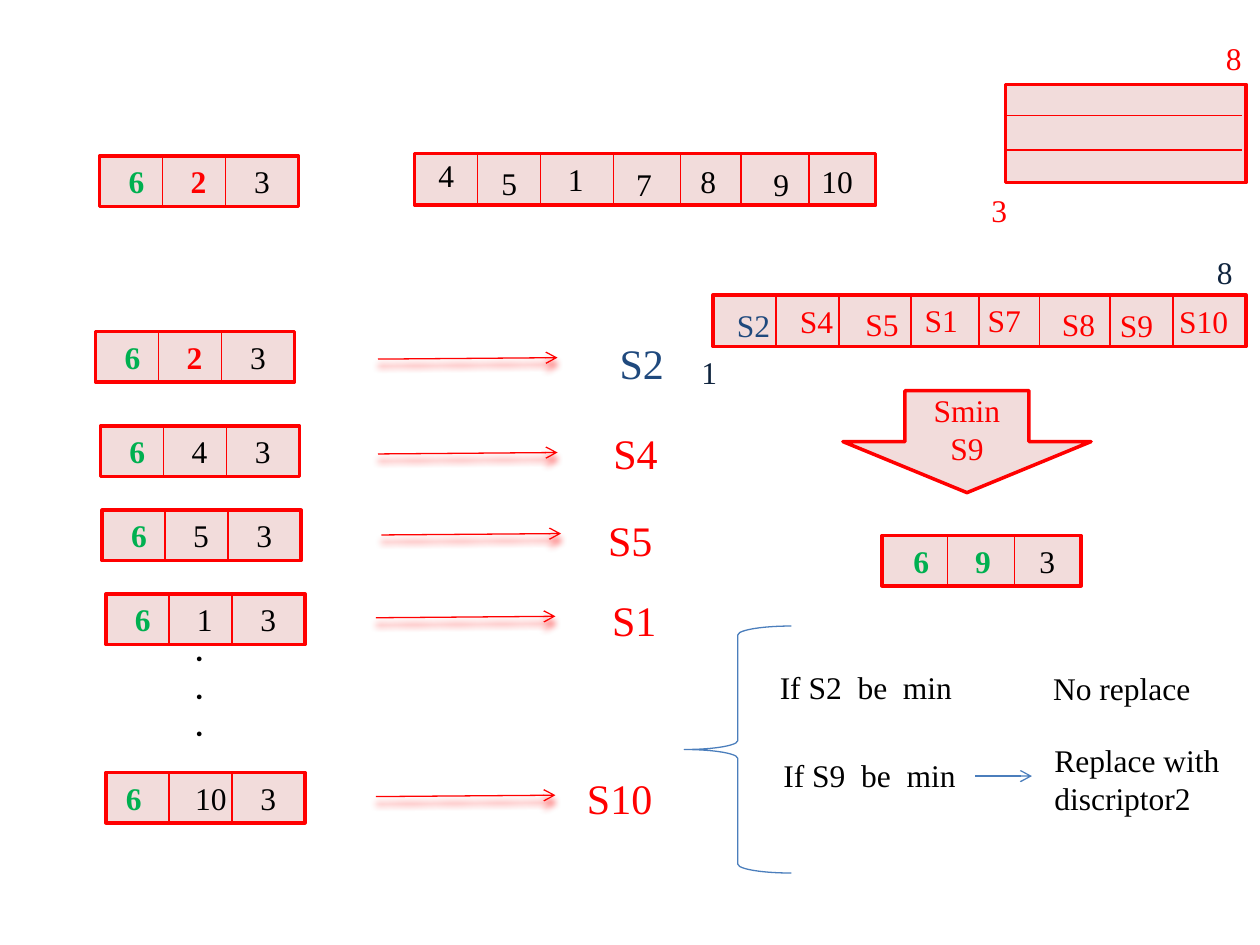
import pptx
import pptx.util
import pptx.dml.color
import pptx.enum.shapes
import pptx.enum.text
import pptx.oxml
import pptx.oxml.ns
import lxml.etree

Pt = pptx.util.Pt
SHAPES = pptx.enum.shapes.MSO_SHAPE
RED, GREEN, BLACK = "FF0000", "00B050", "000000"
BLUE, NAVY, STEEL, PINK = "1F497D", "0F243E", "4B7EBC", "F2DCDB"
SERIF = "Times New Roman"


def color(value):
    """Turn a hex string into a colour."""
    return pptx.dml.color.RGBColor.from_string(value)


def add_element(parent, tag, **attributes):
    """Append a DrawingML element and return it."""
    element = lxml.etree.SubElement(parent, pptx.oxml.ns.qn(tag))
    for name, value in attributes.items():
        element.set(name, str(value))
    return element


def write_text(shape, text, size, text_color, bold=False, font=SERIF, align=None):
    """Fill a shape with uniformly formatted paragraphs."""
    shape.text_frame.text = text
    for paragraph in shape.text_frame.paragraphs:
        paragraph.alignment = align
        paragraph.font.name = font
        paragraph.font.size = Pt(size)
        paragraph.font.bold = bold
        paragraph.font.color.rgb = color(text_color)


def add_label(slide, left, top, text, text_color=BLACK, bold=False, size=18,
              width=None, font=SERIF):
    """Add an unwrapped text box, sized from its text unless a width is given."""
    lines = text.split("\n")
    if width is None:
        width = 14.4 + size * (0.5 * len(text) + 0.06 * text.startswith("S"))
    height = 7.2 + 1.2 * size * len(lines)
    box = slide.shapes.add_textbox(Pt(left), Pt(top), Pt(width), Pt(height))
    box.text_frame.word_wrap = False
    box.text_frame.auto_size = pptx.enum.text.MSO_AUTO_SIZE.SHAPE_TO_FIT_TEXT
    write_text(box, text, size, text_color, bold, font)


def add_outline(slide, kind, left, top, width, height, fill=PINK, line=RED, weight=2):
    """Add a flat preset shape with an outline."""
    shape = slide.shapes.add_shape(kind, Pt(left), Pt(top), Pt(width), Pt(height))
    shape.shadow.inherit = False
    if fill:
        shape.fill.solid()
        shape.fill.fore_color.rgb = color(fill)
    else:
        shape.fill.background()
    shape.line.color.rgb = color(line)
    shape.line.width = Pt(weight)
    return shape


def add_line(slide, start, end, line=RED, arrow=False, glow=False):
    """Add a thin line, optionally with an arrowhead and a soft shadow."""
    connector = slide.shapes.add_connector(
        pptx.enum.shapes.MSO_CONNECTOR.STRAIGHT, *map(Pt, start + end))
    connector.line.color.rgb = color(line)
    connector.line.width = Pt(0.75)
    if arrow:
        add_element(connector.line._get_or_add_ln(), "a:tailEnd", type="arrow")
    effects = add_element(connector._element.spPr, "a:effectLst")
    if glow:
        shadow = add_element(effects, "a:outerShdw", blurRad=Pt(4), dist=Pt(4),
                             dir=5400000, algn="ctr", rotWithShape=0)
        add_element(shadow, "a:srgbClr", val=line)


def add_strip(slide, left, top, width, height, dividers, cells):
    """Add a bar split by vertical dividers, with labels offset from its corner."""
    add_outline(slide, SHAPES.RECTANGLE, left, top, width, height)
    for offset in dividers:
        add_line(slide, (left + offset, top - 0.5), (left + offset, top + height + 0.5))
    for text, across, down, text_color, bold in cells:
        add_label(slide, left + across, top + down, text, text_color, bold)


def add_descriptor(slide, left, top, middle, middle_color=BLACK,
                   dividers=(36, 72), offsets=(9.5, 45, 81.2)):
    """Add a three-cell descriptor whose middle value varies."""
    values = ("6", middle, "3")
    colors = (GREEN, middle_color, BLACK)
    cells = [(value, offset, 0, tint, tint != BLACK)
             for value, offset, tint in zip(values, offsets, colors)]
    add_strip(slide, left, top, 113.8, 28.8, dividers, cells)


def add_candidates(slide):
    """Add the candidate descriptors with arrows to their scores."""
    standard, last = (9.5, 45, 81.2), (4.3, 43.9, 81.2)
    candidates = [
        ("2", RED, BLUE, 54.6, 189.4, standard, 216, 205.2, 347, 189.4),
        ("4", BLACK, RED, 57.4, 243.4, standard, 216, 259.4, 343.4, 240.5),
        ("5", BLACK, RED, 58.3, 291.6, standard, 218, 305.7, 340.4, 290.2),
        ("1", BLACK, RED, 60.5, 339.5, standard, 214.8, 353, 342.7, 336.2),
        ("10", BLACK, RED, 60.5, 441.4, last, 214.8, 455.2, 328.3, 437.8),
    ]
    for (value, value_color, score_color, left, top, offsets,
         arrow_left, arrow_top, score_left, score_top) in candidates:
        add_descriptor(slide, left, top, value, value_color, offsets=offsets)
        add_line(slide, (arrow_left, arrow_top), (arrow_left + 102.6, arrow_top - 0.8),
                 arrow=True, glow=True)
        add_label(slide, score_left, score_top, "S" + value, score_color, size=24)
    add_label(slide, 104.4, 356.4, ".\n.\n.", bold=True, width=19.4, font="Calibri")


def add_long_strips(slide):
    """Add the strip of remaining descriptors and the strip of scores."""
    numbers = [("4", 6.5, -2.2), ("5", 42.5, 2.2), ("1", 80.6, 0), ("7", 119.5, 2.9),
               ("8", 156.2, 1.4), ("9", 198, 2.9), ("10", 225.4, 1.4)]
    add_strip(slide, 236.9, 87.8, 263.5, 29.5, (36, 72, 113.8, 151.9, 186.5, 225.4),
              [cell + (BLACK, False) for cell in numbers])
    scores = [("S2", 6.5, 2.9), ("S4", 42.5, 0.7), ("S5", 79.9, 2.2), ("S1", 113.8, 0),
              ("S7", 149.8, 0), ("S8", 192.2, 2.2), ("S9", 225.4, 2.9),
              ("S10", 259.2, 0.7)]
    add_strip(slide, 407.5, 168.5, 304.6, 29.5,
              (36, 72, 113, 151.9, 186.5, 226.8, 262.8),
              [cell + (BLUE if cell[0] == "S2" else RED, False) for cell in scores])
    add_label(slide, 393.8, 198, "1", NAVY)
    add_label(slide, 688.3, 141.1, "8", NAVY)


def add_memory(slide):
    """Add the three-row block with its size labels."""
    add_outline(slide, SHAPES.RECTANGLE, 574.6, 48.2, 137.5, 56.2)
    for height in (66.2, 85.7):
        add_line(slide, (574.6, height), (709.9, height))
    add_label(slide, 559.4, 105.8, "3", RED)
    add_label(slide, 693.4, 18.7, "8", RED)


def add_decision(slide):
    """Add the minimum arrow, the winning descriptor and the replacement rules."""
    arrow = add_outline(slide, SHAPES.DOWN_ARROW, 481.7, 223.2, 141.8, 58.3)
    arrow.text_frame.vertical_anchor = pptx.enum.text.MSO_ANCHOR.MIDDLE
    write_text(arrow, "Smin\nS9", 18, RED, align=pptx.enum.text.PP_ALIGN.CENTER)
    add_descriptor(slide, 504, 306, "9", GREEN, (37.4, 75.6), (10.8, 46.1, 82.8))
    add_outline(slide, SHAPES.LEFT_BRACE, 391, 357.8, 61.2, 141.1, None, STEEL, 0.75)
    add_label(slide, 438.5, 378, "If S2  be  min", width=113.8)
    add_label(slide, 594.7, 378.7, "No replace", width=94.3)
    add_label(slide, 440.6, 428.4, "If S9  be  min", width=113.8)
    add_line(slide, (557.3, 443.5), (589.7, 443.5), STEEL, arrow=True)
    add_label(slide, 595.4, 419.8, "Replace with\ndiscriptor2", width=109.4)


def main():
    """Build the slide and save it."""
    presentation = pptx.Presentation()
    presentation.slide_width, presentation.slide_height = Pt(720), Pt(540)
    slide = presentation.slides.add_slide(presentation.slide_layouts[6])
    add_descriptor(slide, 56.9, 89.3, "2", RED)
    add_candidates(slide)
    add_long_strips(slide)
    add_memory(slide)
    add_decision(slide)
    presentation.save("out.pptx")


if __name__ == "__main__":
    main()
